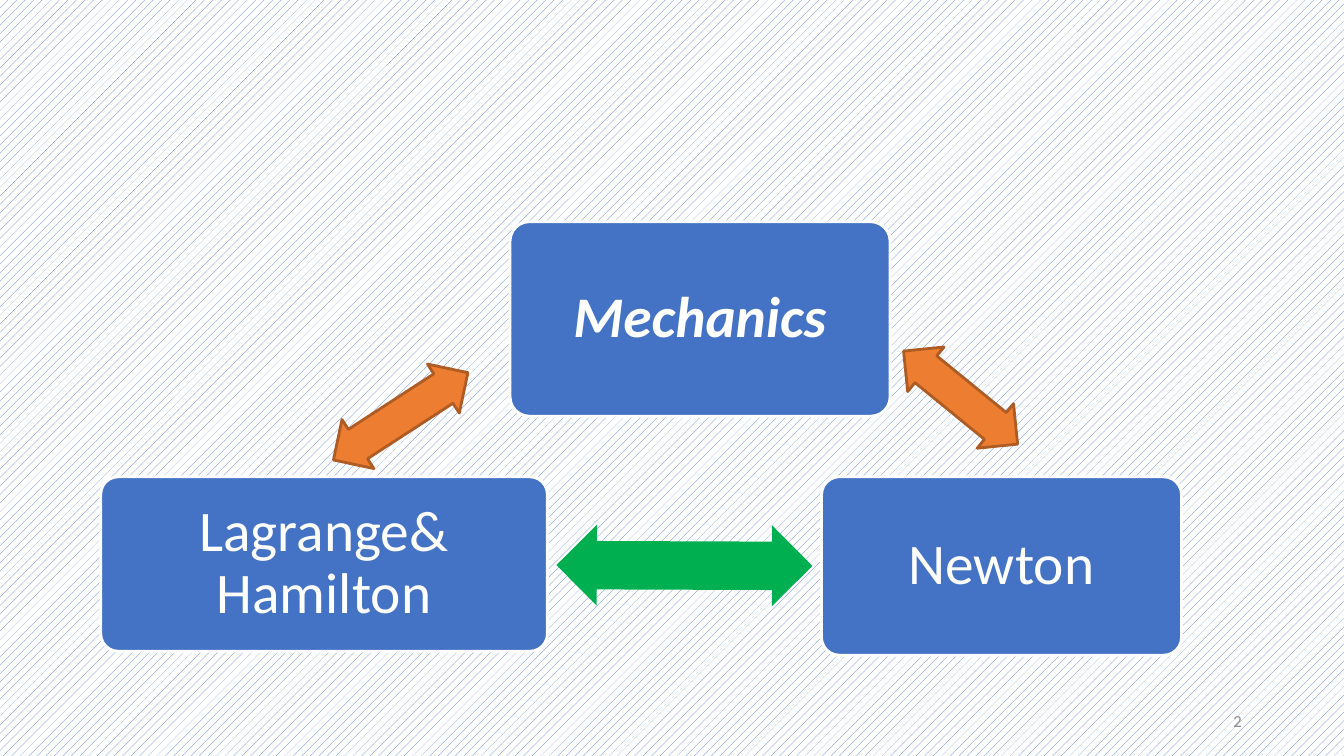
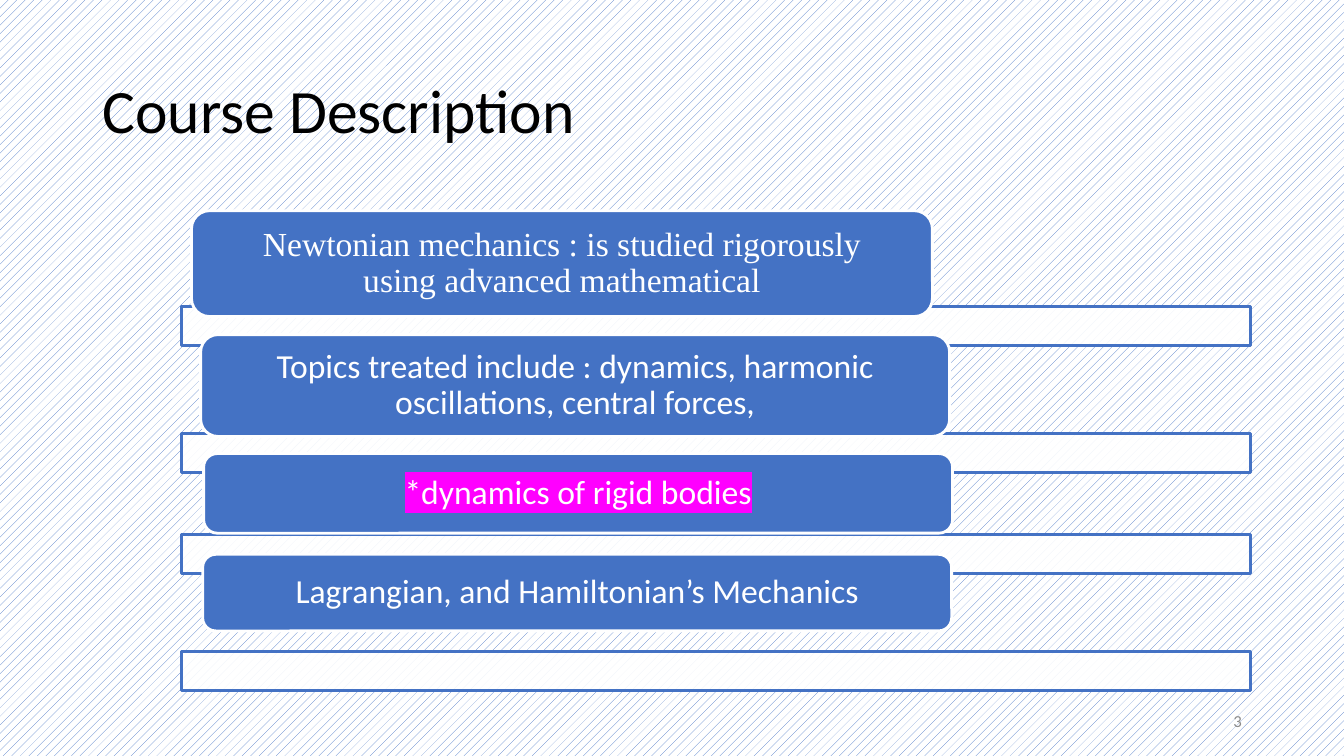
"""Build two slides on mechanics: a relation diagram and a course description."""
from dataclasses import dataclass
from typing import Optional

import lxml.etree
import pptx
import pptx.dml.color
import pptx.dml.fill
import pptx.enum.dml
import pptx.enum.shapes
import pptx.enum.text
import pptx.oxml.ns
import pptx.presentation
import pptx.shapes.autoshape
import pptx.slide
import pptx.util

SLIDE_WIDTH = pptx.util.Inches(13.333)
SLIDE_HEIGHT = pptx.util.Inches(7.5)
COLUMNS = ROWS = 100

BLUE = "4472C4"
ORANGE = "ED7D31"
BROWN = "AF5C24"
GREEN = "00B050"
MAGENTA = "FF00FF"
WHITE = "FFFFFF"
BLACK = "000000"
GRAY = "8C8C8C"
SANS = "Calibri"
SERIF = "Times New Roman"

SHAPES = pptx.enum.shapes.MSO_SHAPE
ALIGN = pptx.enum.text.PP_ALIGN


@dataclass(frozen=True)
class Area:
    column: float
    row: float
    columns: float
    rows: float

    def lengths(self) -> tuple[int, int, int, int]:
        return (
            round(self.column / COLUMNS * SLIDE_WIDTH),
            round(self.row / ROWS * SLIDE_HEIGHT),
            round(self.columns / COLUMNS * SLIDE_WIDTH),
            round(self.rows / ROWS * SLIDE_HEIGHT),
        )


@dataclass(frozen=True)
class TextStyle:
    size: float
    color: str = WHITE
    font: str = SANS
    bold: bool = False
    italic: bool = False
    highlight: Optional[str] = None
    align: ALIGN = ALIGN.CENTER
    line_spacing: float = 0.9
    inset_x: float = 0.1
    inset_y: float = 0.05


@dataclass(frozen=True)
class Card:
    area: Area
    text: str
    style: TextStyle


@dataclass(frozen=True)
class Arrow:
    area: Area
    rotation: float
    fill: str
    line: Optional[str] = None


TITLE_AREA = Area(6.9, 5.33, 86.25, 19.33)
NUMBER_AREA = Area(70.65, 92.67, 22.5, 5.33)
TITLE_STYLE = TextStyle(44, BLACK, align=ALIGN.LEFT)
NUMBER_STYLE = TextStyle(12, GRAY, align=ALIGN.RIGHT, line_spacing=1.0)

NODE_CORNER = 0.1
NODE_INSET = 0.22
NODE_STYLE = TextStyle(41, inset_x=NODE_INSET, inset_y=NODE_INSET)
MAIN_NODE_STYLE = TextStyle(
    41, bold=True, italic=True, inset_x=NODE_INSET, inset_y=NODE_INSET
)
NODES = (
    Card(Area(37.95, 29.33, 28.28, 25.73), "Mechanics", MAIN_NODE_STYLE),
    Card(Area(61.13, 63.07, 26.78, 23.6), "Newton", NODE_STYLE),
    Card(Area(7.5, 63.07, 33.23, 23.07), "Lagrange& Hamilton", NODE_STYLE),
)
ARROWS = (
    Arrow(Area(66, 48.8, 10.95, 7.6), 39.2, ORANGE, BROWN),
    Arrow(Area(41.4, 69.47, 19.05, 10.67), 180.2, GREEN),
    Arrow(Area(23.85, 51.2, 11.93, 7.73), 327, ORANGE, BROWN),
)

TOPIC_CORNER = 0.17
TOPIC_INSET = 0.33
TOPIC_STYLE = TextStyle(24, inset_x=TOPIC_INSET)
SERIF_TOPIC_STYLE = TextStyle(24, font=SERIF, inset_x=TOPIC_INSET)
MARKED_TOPIC_STYLE = TextStyle(24, highlight=MAGENTA, inset_x=TOPIC_INSET)
TOPICS = (
    Card(
        Area(14.25, 27.87, 55.13, 14),
        "Newtonian mechanics : is studied rigorously using advanced mathematical",
        SERIF_TOPIC_STYLE,
    ),
    Card(
        Area(14.93, 44.27, 55.73, 13.47),
        "Topics treated include : dynamics, harmonic oscillations, central forces,",
        TOPIC_STYLE,
    ),
    Card(Area(15.15, 60, 55.73, 10.53), "*dynamics of rigid bodies", MARKED_TOPIC_STYLE),
    Card(
        Area(15.08, 73.33, 55.73, 10.13),
        "Lagrangian, and Hamiltonian’s Mechanics",
        TOPIC_STYLE,
    ),
)
RAIL_ROWS = (40.53, 57.33, 70.67, 86.13)
RAIL_OPACITY = 90


def rgb(color: str) -> pptx.dml.color.RGBColor:
    return pptx.dml.color.RGBColor.from_string(color)


def append_color(parent: lxml.etree._Element, color: str) -> None:
    element = lxml.etree.SubElement(parent, pptx.oxml.ns.qn("a:srgbClr"))
    element.set("val", color)


def set_opacity(shape: pptx.shapes.autoshape.Shape, percent: int) -> None:
    color = shape.fill._xPr.find(
        f"{pptx.oxml.ns.qn('a:solidFill')}/{pptx.oxml.ns.qn('a:srgbClr')}"
    )
    alpha = lxml.etree.SubElement(color, pptx.oxml.ns.qn("a:alpha"))
    alpha.set("val", str(percent * 1000))


def write_text(
    shape: pptx.shapes.autoshape.Shape, text: str, style: TextStyle
) -> None:
    frame = shape.text_frame
    frame.word_wrap = True
    frame.vertical_anchor = pptx.enum.text.MSO_ANCHOR.MIDDLE
    frame.margin_left = frame.margin_right = pptx.util.Inches(style.inset_x)
    frame.margin_top = frame.margin_bottom = pptx.util.Inches(style.inset_y)
    paragraph = frame.paragraphs[0]
    paragraph.alignment = style.align
    paragraph.line_spacing = style.line_spacing
    run = paragraph.add_run()
    run.text = text
    run.font.size = pptx.util.Pt(style.size)
    run.font.name = style.font
    run.font.bold = style.bold
    run.font.italic = style.italic
    run.font.color.rgb = rgb(style.color)
    if style.highlight:
        highlight = lxml.etree.Element(pptx.oxml.ns.qn("a:highlight"))
        append_color(highlight, style.highlight)
        run.font._rPr.find(pptx.oxml.ns.qn("a:solidFill")).addnext(highlight)


def add_label(
    slide: pptx.slide.Slide, area: Area, text: str, style: TextStyle
) -> None:
    write_text(slide.shapes.add_textbox(*area.lengths()), text, style)


def add_figure(
    slide: pptx.slide.Slide,
    kind: SHAPES,
    area: Area,
    fill: str,
    line: Optional[str],
) -> pptx.shapes.autoshape.Shape:
    shape = slide.shapes.add_shape(kind, *area.lengths())
    shape.shadow.inherit = False
    shape.fill.solid()
    shape.fill.fore_color.rgb = rgb(fill)
    if line:
        shape.line.color.rgb = rgb(line)
        shape.line.width = pptx.util.Pt(2)
    else:
        shape.line.fill.background()
    return shape


def add_card(slide: pptx.slide.Slide, card: Card, corner: float) -> None:
    shape = add_figure(slide, SHAPES.ROUNDED_RECTANGLE, card.area, BLUE, WHITE)
    shape.adjustments[0] = corner
    write_text(shape, card.text, card.style)


def add_arrow(slide: pptx.slide.Slide, arrow: Arrow) -> None:
    shape = add_figure(
        slide, SHAPES.LEFT_RIGHT_ARROW, arrow.area, arrow.fill, arrow.line
    )
    shape.adjustments[0] = 0.6
    shape.adjustments[1] = 0.5
    shape.rotation = arrow.rotation


def add_rail(slide: pptx.slide.Slide, row: float) -> None:
    area = Area(13.5, row, 79.58, 5.2)
    shape = add_figure(slide, SHAPES.RECTANGLE, area, WHITE, BLUE)
    set_opacity(shape, RAIL_OPACITY)


def add_slide(
    presentation: pptx.presentation.Presentation, number: int
) -> pptx.slide.Slide:
    slide = presentation.slides.add_slide(presentation.slide_layouts[6])
    fill = slide.background.fill
    fill.patterned()
    fill.pattern = pptx.enum.dml.MSO_PATTERN.PERCENT_20
    fill.fore_color.rgb = rgb(BLUE)
    fill.back_color.rgb = rgb(WHITE)
    add_label(slide, NUMBER_AREA, str(number), NUMBER_STYLE)
    return slide


def build_relations(presentation: pptx.presentation.Presentation) -> None:
    slide = add_slide(presentation, 2)
    for node in NODES:
        add_card(slide, node, NODE_CORNER)
    for arrow in ARROWS:
        add_arrow(slide, arrow)


def build_description(presentation: pptx.presentation.Presentation) -> None:
    slide = add_slide(presentation, 3)
    add_label(slide, TITLE_AREA, "Course Description", TITLE_STYLE)
    for row, topic in zip(RAIL_ROWS, TOPICS):
        add_rail(slide, row)
        add_card(slide, topic, TOPIC_CORNER)


def main() -> None:
    presentation = pptx.Presentation()
    presentation.slide_width = SLIDE_WIDTH
    presentation.slide_height = SLIDE_HEIGHT
    build_relations(presentation)
    build_description(presentation)
    presentation.save("out.pptx")


if __name__ == "__main__":
    main()
